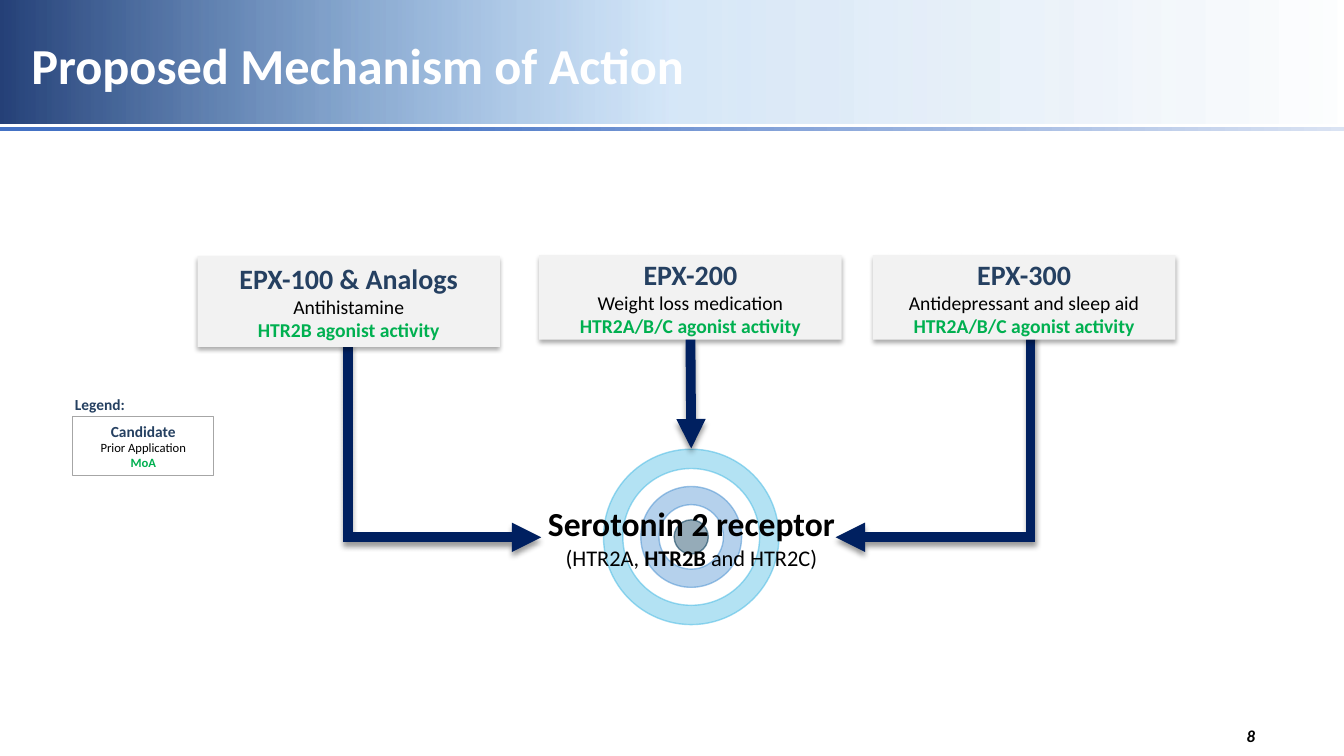
from dataclasses import dataclass
from lxml.etree import SubElement
from pptx import Presentation
from pptx.dml.color import RGBColor
from pptx.enum.shapes import MSO_CONNECTOR, MSO_SHAPE
from pptx.enum.text import MSO_ANCHOR, MSO_AUTO_SIZE, PP_ALIGN
from pptx.oxml import parse_xml
from pptx.oxml.ns import nsdecls, qn
from pptx.util import Cm, Pt

NAVY, INK, GREEN, BLACK = "002060", "254061", "00B050", "000000"
MIDX, MIDY = 17.42, 13.53


@dataclass
class Run:
    text: str
    size: float
    color: str = BLACK
    bold: bool = True
    italic: bool = False


@dataclass
class Area:
    left: float
    top: float
    width: float
    height: float

    def cm(self) -> list:
        return [Cm(v) for v in (self.left, self.top, self.width, self.height)]


@dataclass
class Drug:
    name: str
    use: str
    action: str
    area: Area


@dataclass
class Ring:
    kind: MSO_SHAPE
    size: float
    color: str
    hole: float = 0


@dataclass
class Bar:
    area: Area
    angle: int
    stops: list


BARS = [
    Bar(Area(0, -0.08, 33.87, 3.2), 180, [(0, "1B67B3", 0), (50, "217DD9", 18), (100, NAVY, 85)]),
    Bar(Area(0, 3.2, 33.87, 0.1), 0, [(26, "4472C4", 100), (100, "DAE3F3", 100)]),
]
RINGS = [
    Ring(MSO_SHAPE.DONUT, 2.54, "5B9BD5", 0.18),
    Ring(MSO_SHAPE.DONUT, 4.42, "58C0E6", 0.11),
    Ring(MSO_SHAPE.OVAL, 0.86, "144662"),
]
DRUGS = [
    Drug("EPX-100 & Analogs", "Antihistamine", "HTR2B agonist activity", Area(4.98, 6.45, 7.62, 2.29)),
    Drug("EPX-200", "Weight loss medication", "HTR2A/B/C agonist activity", Area(13.59, 6.43, 7.62, 2.13)),
    Drug("EPX-300", "Antidepressant and sleep aid", "HTR2A/B/C agonist activity", Area(22, 6.43, 7.62, 2.13)),
]


def rgb(code: str) -> RGBColor:
    return RGBColor.from_string(code)


def style(obj, **values) -> None:
    for key, value in values.items():
        setattr(obj, key, value)


def write(shape, lines: list, align=PP_ALIGN.CENTER, inset=(0, 0, 0, 0), **extra) -> None:
    frame = shape.text_frame
    sides = ("margin_left", "margin_top", "margin_right", "margin_bottom")
    values = {"word_wrap": True, "auto_size": MSO_AUTO_SIZE.NONE, "vertical_anchor": MSO_ANCHOR.MIDDLE}
    values.update(zip(sides, map(Cm, inset)))
    style(frame, **{**values, **extra})
    for i, line in enumerate(lines):
        para = frame.add_paragraph() if i else frame.paragraphs[0]
        para.alignment = align
        for item in line:
            run = para.add_run()
            run.text = item.text
            style(run.font, name="Calibri", size=Pt(item.size), bold=item.bold, italic=item.italic)
            run.font.color.rgb = rgb(item.color)


def shade(shape, alpha: int, blur: float, dist: float) -> None:
    props = shape.element.spPr
    for old in props.findall(qn("a:effectLst")):
        props.remove(old)
    props.append(parse_xml(
        f'<a:effectLst {nsdecls("a")}><a:outerShdw blurRad="{Pt(blur)}" dist="{Pt(dist)}" dir="5400000" '
        f'rotWithShape="0"><a:srgbClr val="{BLACK}"><a:alpha val="{alpha * 1000}"/></a:srgbClr>'
        f'</a:outerShdw></a:effectLst>'))


def form(shapes, kind, area: Area, fill: str = "", edge: str = ""):
    shape = shapes.add_shape(kind, *area.cm())
    shape.shadow.inherit = False
    for part, color in ((shape.fill, fill), (shape.line.fill, edge)):
        if color:
            part.solid()
            part.fore_color.rgb = rgb(color)
        else:
            part.background()
    if edge:
        shape.line.width = Pt(1)
    return shape


def draw_bar(shapes, bar: Bar) -> None:
    shape = form(shapes, MSO_SHAPE.RECTANGLE, bar.area)
    stops = "".join(
        f'<a:gs pos="{pos * 1000}"><a:srgbClr val="{color}"><a:alpha val="{alpha * 1000}"/></a:srgbClr></a:gs>'
        for pos, color, alpha in bar.stops)
    props = shape.element.spPr
    props.replace(props.find(qn("a:noFill")), parse_xml(
        f'<a:gradFill {nsdecls("a")} rotWithShape="1"><a:gsLst>{stops}</a:gsLst>'
        f'<a:lin ang="{bar.angle * 60000}" scaled="0"/></a:gradFill>'))


def draw_ring(shapes, ring: Ring) -> None:
    half = ring.size / 2
    area = Area(MIDX - half, MIDY - half, ring.size, ring.size)
    shape = form(shapes, ring.kind, area, ring.color, ring.color)
    if ring.hole:
        shape.adjustments[0] = ring.hole
    for color, alpha in zip(shape.element.spPr.iter(qn("a:srgbClr")), (45, 60)):
        SubElement(color, qn("a:alpha"), val=str(alpha * 1000))


def draw_arrow(shapes, kind, ends: tuple):
    arrow = shapes.add_connector(kind, *map(Cm, ends))
    arrow.line.width = Pt(7)
    arrow.line.color.rgb = rgb(NAVY)
    edge = arrow.line._get_or_add_ln()
    SubElement(edge, qn("a:miter"), lim="800000")
    SubElement(edge, qn("a:tailEnd"), type="triangle")
    if kind == MSO_CONNECTOR.ELBOW:
        guides = arrow.element.spPr.find(qn("a:prstGeom")).get_or_add_avLst()
        SubElement(guides, qn("a:gd"), name="adj1", fmla="val -300")
    shade(arrow, 40, 4, 3)
    return arrow


def card(name: str, use: str, action: str, big: float, small: float) -> list:
    return [[Run(name, big, INK)], [Run(use, small, bold=False)], [Run(action, small, GREEN)]]


def main() -> None:
    deck = Presentation()
    style(deck, slide_width=Cm(33.87), slide_height=Cm(19.05))
    slide = deck.slides.add_slide(deck.slide_layouts[5])
    shapes = slide.shapes
    for bar in BARS:
        draw_bar(shapes, bar)

    title = shapes.title
    shapes.element.append(title.element)
    style(title, **dict(zip(("left", "top", "width", "height"), Area(0, 0.33, 31.55, 2.79).cm())))
    write(title, [[Run("Proposed Mechanism of Action", 36, "FFFFFF")]], PP_ALIGN.LEFT, (0.79, 0, 0.25, 0))
    title.text_frame.paragraphs[0].line_spacing = 0.9

    page = shapes.add_textbox(*Area(24.26, 18.03, 7.62, 1.02).cm())
    write(page, [[Run("8", 12, italic=True)]], PP_ALIGN.RIGHT, (0.25, 0.13, 0.25, 0.13))

    for ends in ((25.96, 7.19, 21.06, 13.54), (8.79, 8.74, 13.64, 13.54)):
        draw_arrow(shapes, MSO_CONNECTOR.ELBOW, ends)
    for ring in RINGS:
        draw_ring(shapes, ring)

    label = shapes.add_textbox(*Area(12.83, 11.79, 9.19, 3.48).cm())
    write(label, [
        [Run("Serotonin 2 receptor", 24)],
        [Run("(HTR2A, ", 16, bold=False), Run("HTR2B", 16), Run(" and HTR2C)", 16, bold=False)],
    ])

    boxes = []
    for drug in DRUGS:
        box = form(shapes, MSO_SHAPE.RECTANGLE, drug.area, "F2F2F2")
        shade(box, 32, 3.5, 2.2)
        write(box, card(drug.name, drug.use, drug.action, 20, 14))
        boxes.append(box)
    arrow = draw_arrow(shapes, MSO_CONNECTOR.STRAIGHT, (17.4, 8.56, MIDX, 11.3))
    arrow.begin_connect(boxes[1], 2)

    key = form(shapes, MSO_SHAPE.RECTANGLE, Area(1.83, 10.49, 3.56, 1.5), edge="A6A6A6")
    write(key, card("Candidate", "Prior Application", "MoA", 11, 9))
    head = shapes.add_textbox(*Area(1.63, 9.83, 1.78, 0.66).cm())
    write(head, [[Run("Legend:", 11, INK)]], inset=(0.25, 0.13, 0.25, 0.13),
          word_wrap=False, auto_size=MSO_AUTO_SIZE.SHAPE_TO_FIT_TEXT, vertical_anchor=MSO_ANCHOR.TOP)
    deck.save("out.pptx")


if __name__ == "__main__":
    main()
